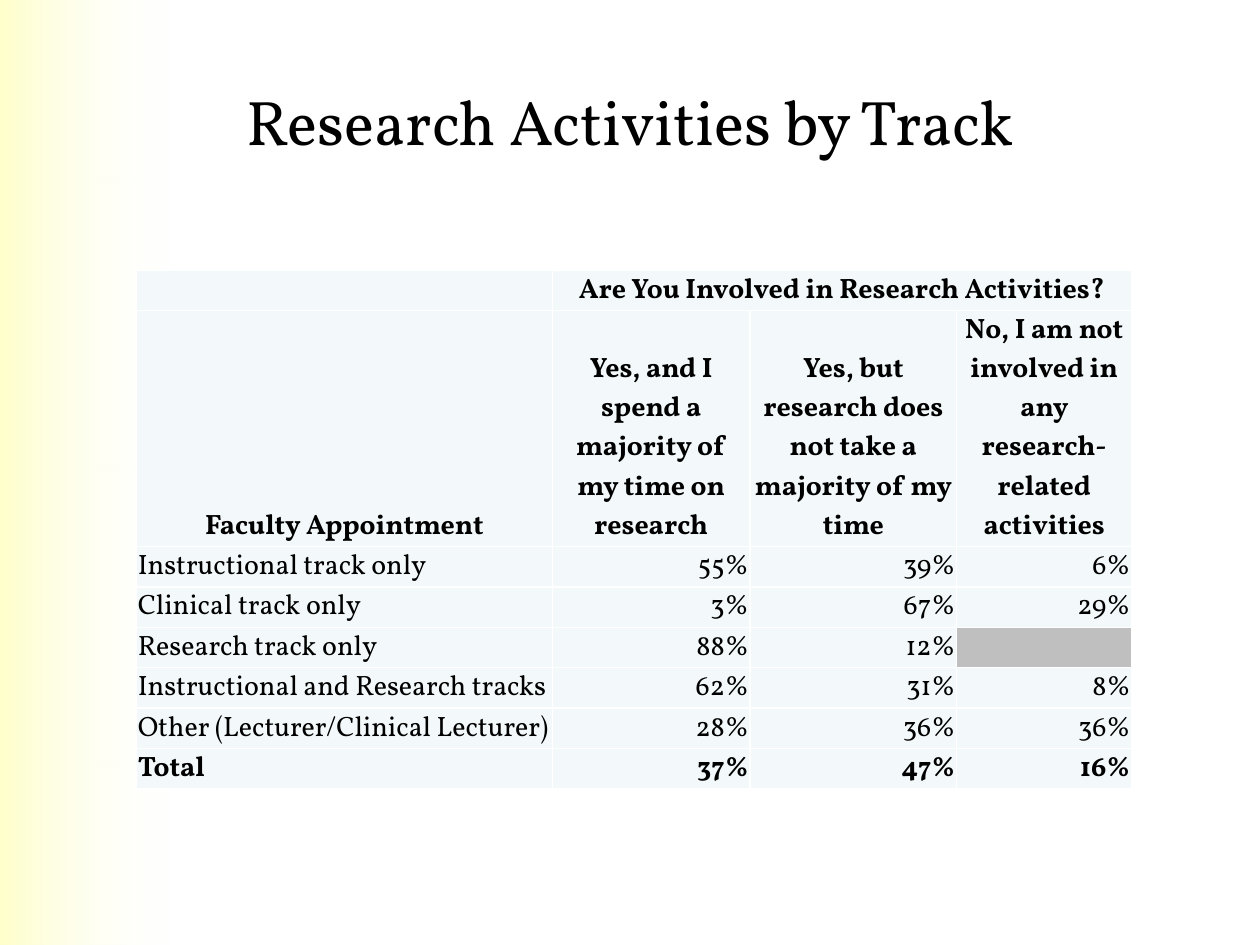
import pptx
import pptx.util
import pptx.dml.color
import pptx.enum.shapes
import pptx.enum.text
import pptx.oxml
import pptx.oxml.ns
import lxml.etree as etree

Pt = pptx.util.Pt
Align = pptx.enum.text.PP_ALIGN
Anchor = pptx.enum.text.MSO_ANCHOR

# Content
TITLE = "Research Activities by Track"
ROWS = [
    ("", "Are You Involved in Research Activities?", "", ""),
    ("Faculty Appointment",
     "Yes, and I spend a majority of my time on research",
     "Yes, but research does not take a majority of my time",
     "No, I am not involved in any research-related activities"),
    ("Instructional track only", "55%", "39%", "6%"),
    ("Clinical track only", "3%", "67%", "29%"),
    ("Research track only", "88%", "12%", ""),
    ("Instructional and Research tracks", "62%", "31%", "8%"),
    ("Other (Lecturer/Clinical Lecturer)", "28%", "36%", "36%"),
    ("Total", "37%", "47%", "16%"),
]
HEADS = 2
FONT = "Vollkorn"
COLORS = {"text": "000000", "cell": "F3F9FA", "blank": "BFBFBF",
          "line": "FFFFFF", "glow": "FFFFCC", "fade": "FFFFF4"}
WIDTHS = [237.6, 113.04, 118.08, 100.08]
HEIGHTS = [22.5, 134.5] + [23.05] * (len(ROWS) - HEADS)


def color(name):
    return pptx.dml.color.RGBColor.from_string(COLORS[name])


def write(frame, text, size, align, bold=False):
    para = frame.paragraphs[0]
    para.alignment = align
    run = para.add_run()
    run.text = text
    run.font.name = FONT
    run.font.size = Pt(size)
    run.font.bold = bold
    run.font.color.rgb = color("text")


def border(cell):
    props = cell._tc.get_or_add_tcPr()
    for spot, side in enumerate(("lnL", "lnR", "lnT", "lnB")):
        props.insert(spot, pptx.oxml.parse_xml(
            f'<a:{side} {pptx.oxml.ns.nsdecls("a")} w="{Pt(1)}"><a:solidFill>'
            f'<a:srgbClr val="{COLORS["line"]}"/></a:solidFill></a:{side}>'))


deck = pptx.Presentation()
deck.slide_width, deck.slide_height = Pt(720), Pt(540)
slide = deck.slides.add_slide(deck.slide_layouts[5])

# Fading band on the left edge
band = slide.shapes.add_shape(
    pptx.enum.shapes.MSO_SHAPE.RECTANGLE, 0, 0, Pt(96), Pt(540))
band.shadow.inherit = False
band.line.fill.background()
band.fill.gradient()
band.fill.gradient_angle = 0
for stop, name, place in zip(band.fill.gradient_stops, ("glow", "fade"), (0, 1)):
    stop.color.rgb = color(name)
    stop.position = place
last = band._element.findall(".//" + pptx.oxml.ns.qn("a:srgbClr"))[-1]
etree.SubElement(last, pptx.oxml.ns.qn("a:alpha")).set("val", "0")
slide.shapes._spTree.insert(2, band._element)

# Title
title = slide.shapes.title
title.left, title.top, title.width, title.height = Pt(36), Pt(24), Pt(648), Pt(90)
title.text_frame.vertical_anchor = Anchor.MIDDLE
write(title.text_frame, TITLE, 36, Align.CENTER)

# Table
table = slide.shapes.add_table(
    len(ROWS), len(WIDTHS), Pt(78), Pt(154.5),
    Pt(sum(WIDTHS)), Pt(sum(HEIGHTS))).table
for col, width in zip(table.columns, WIDTHS):
    col.width = Pt(width)
for row, height in zip(table.rows, HEIGHTS):
    row.height = Pt(height)
table.cell(0, 1).merge(table.cell(0, 3))

for r, row in enumerate(ROWS):
    head = r < HEADS
    bold = head or r == len(ROWS) - 1
    for c, text in enumerate(row):
        cell = table.cell(r, c)
        cell.margin_left = cell.margin_right = cell.margin_top = Pt(0.72)
        cell.margin_bottom = 0
        cell.vertical_anchor = Anchor.BOTTOM if r == 1 else Anchor.TOP
        cell.fill.solid()
        cell.fill.fore_color.rgb = color("cell" if text or head else "blank")
        border(cell)
        if text:
            align = Align.CENTER if head else Align.RIGHT if c else Align.LEFT
            write(cell.text_frame, text, 16, align, bold)

deck.save("out.pptx")
